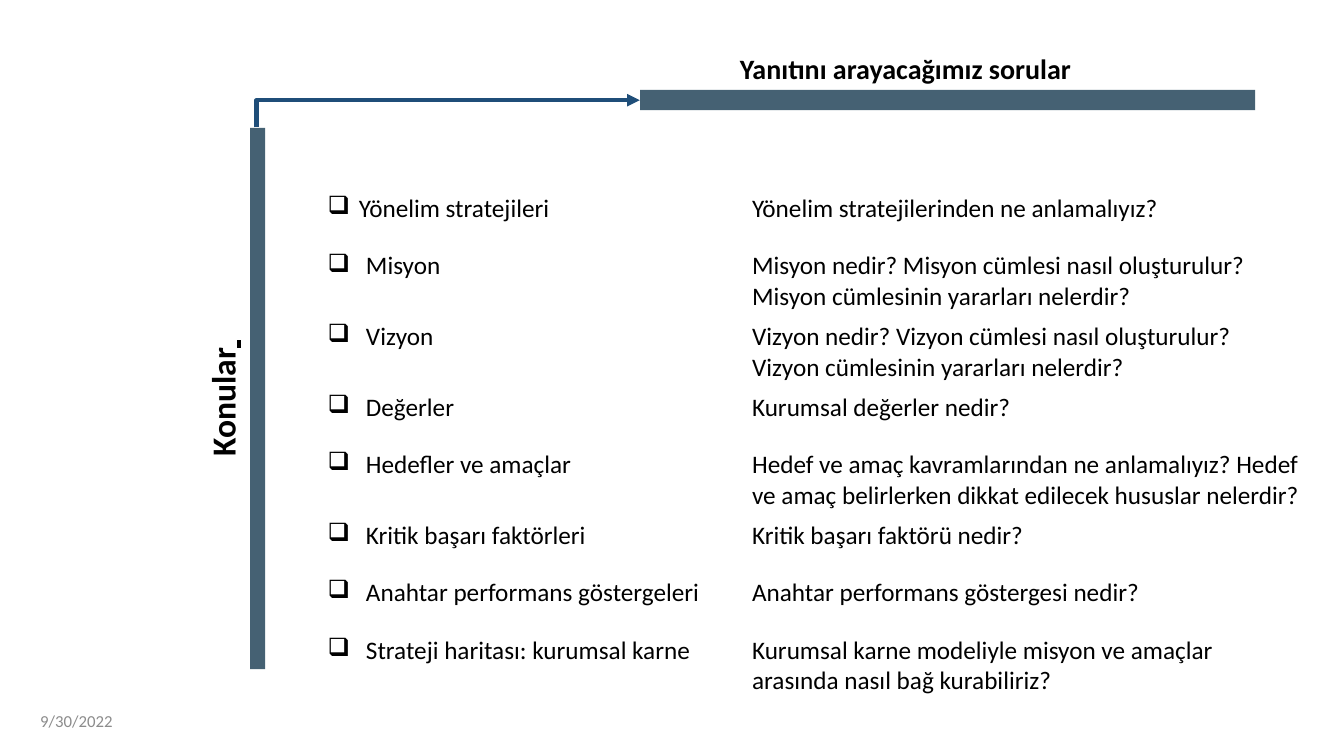
from lxml import etree
from pptx import Presentation, util as u
from pptx.dml.color import RGBColor
from pptx.enum import shapes as es, text as et
from pptx.oxml.ns import qn

deck = Presentation()
deck.slide_width, deck.slide_height = W, H = u.Inches(13.33), u.Inches(7.5)
slide = deck.slides.add_slide(deck.slide_layouts[6])
items = slide.shapes


def box(left, top, wide, high):
    """Turn percent shares of the slide into lengths."""
    return [int(size * part / 100) for size, part in
            ((W, left), (H, top), (W, wide), (H, high))]


def write(par, words, tint="000000", **form):
    """Add a run with the given colour and font values."""
    run = par.add_run()
    run.text = words
    run.font.color.rgb = RGBColor.from_string(tint)
    for key, val in {"name": "Calibri", **form}.items():
        setattr(run.font, key, val)


# Date, side label and heading
MID, TOP = et.MSO_ANCHOR.MIDDLE, et.MSO_ANCHOR.TOP
LEFT, CENTER = et.PP_ALIGN.LEFT, et.PP_ALIGN.CENTER
labels = [
    ((2.25, 92.67, 22.5, 5.33), 0, MID, LEFT,
     [("9/30/2022", "8C8C8C", {"size": u.Pt(12)})]),
    ((-3.23, 48.8, 40.14, 7.73), 270, TOP, CENTER,
     [("Konular", "000000", {"size": u.Pt(24), "bold": True}),
      (" ", "000000", {"size": u.Pt(24), "bold": True, "underline": True})]),
    ((54.31, 6.13, 28.58, 5.87), 0, TOP, LEFT,
     [("Yanıtını arayacağımız sorular", "000000",
       {"size": u.Pt(20), "bold": True})]),
]
for place, turn, anchor, align, runs in labels:
    label = items.add_textbox(*box(*place))
    label.rotation = turn
    frame = label.text_frame
    frame.word_wrap = True
    frame.vertical_anchor = anchor
    par = frame.paragraphs[0]
    par.alignment = align
    for words, tint, form in runs:
        write(par, words, tint, **form)

# Side bar and top bar
for place in ((18.6, 16.93, 1.13, 71.6), (47.64, 11.9, 45.76, 2.67)):
    bar = items.add_shape(es.MSO_SHAPE.RECTANGLE, *box(*place))
    bar.shadow.inherit = False
    bar.fill.solid()
    bar.fill.fore_color.rgb = RGBColor.from_string("456173")
    bar.line.fill.background()

# Bent arrow from the side bar to the top bar
x, y, wide, high = box(32.33, -10.27, 2.03, 50.67)
arrow = items.add_connector(es.MSO_CONNECTOR.ELBOW, x + wide, y + high, x, y)
arrow.line.width = u.Pt(3)
arrow.line.color.rgb = RGBColor.from_string("1F4E79")
prop = arrow.element.spPr
prop.find(qn("a:xfrm")).set("rot", "5400000")
prop.find(qn("a:prstGeom")).set("prst", "bentConnector2")
etree.SubElement(prop.find(qn("a:ln")), qn("a:tailEnd"), type="triangle")
etree.SubElement(prop, qn("a:effectLst"))

# Topics and their questions
rows = [
    ("Yönelim stratejileri", "Yönelim stratejilerinden ne anlamalıyız?"),
    ("Misyon", "Misyon nedir? Misyon cümlesi nasıl oluşturulur? "
               "Misyon cümlesinin yararları nelerdir?"),
    ("Vizyon", "Vizyon nedir? Vizyon cümlesi nasıl oluşturulur? "
               "Vizyon cümlesinin yararları nelerdir?"),
    ("Değerler", "Kurumsal değerler nedir?"),
    ("Hedefler ve amaçlar",
     "Hedef ve amaç kavramlarından ne anlamalıyız? "
     "Hedef ve amaç belirlerken dikkat edilecek hususlar nelerdir?"),
    ("Kritik başarı faktörleri", "Kritik başarı faktörü nedir?"),
    ("Anahtar performans göstergeleri", "Anahtar performans göstergesi nedir?"),
    ("Strateji haritası: kurumsal karne",
     "Kurumsal karne modeliyle misyon ve amaçlar arasında nasıl bağ kurabiliriz?"),
]
table = items.add_table(len(rows), 2,
                        *box(23.63, 24.93, 74.12, 7.6 * len(rows))).table
table.first_row = table.horz_banding = False
for col, share in zip(table.columns, (31.58, 42.54)):
    col.width = int(W * share / 100)
for r, pair in enumerate(rows):
    for c, words in enumerate(pair):
        cell = table.cell(r, c)
        cell.fill.background()
        par = cell.text_frame.paragraphs[0]
        write(par, words, size=u.Pt(18))
        if c == 0:
            inset = u.Inches(0.38 if r else 0.31)
            prop = par._p.get_or_add_pPr()
            prop.set("marL", str(inset))
            prop.set("indent", str(-inset))
            etree.SubElement(prop, qn("a:buChar"), char="❑")

deck.save("out.pptx")
